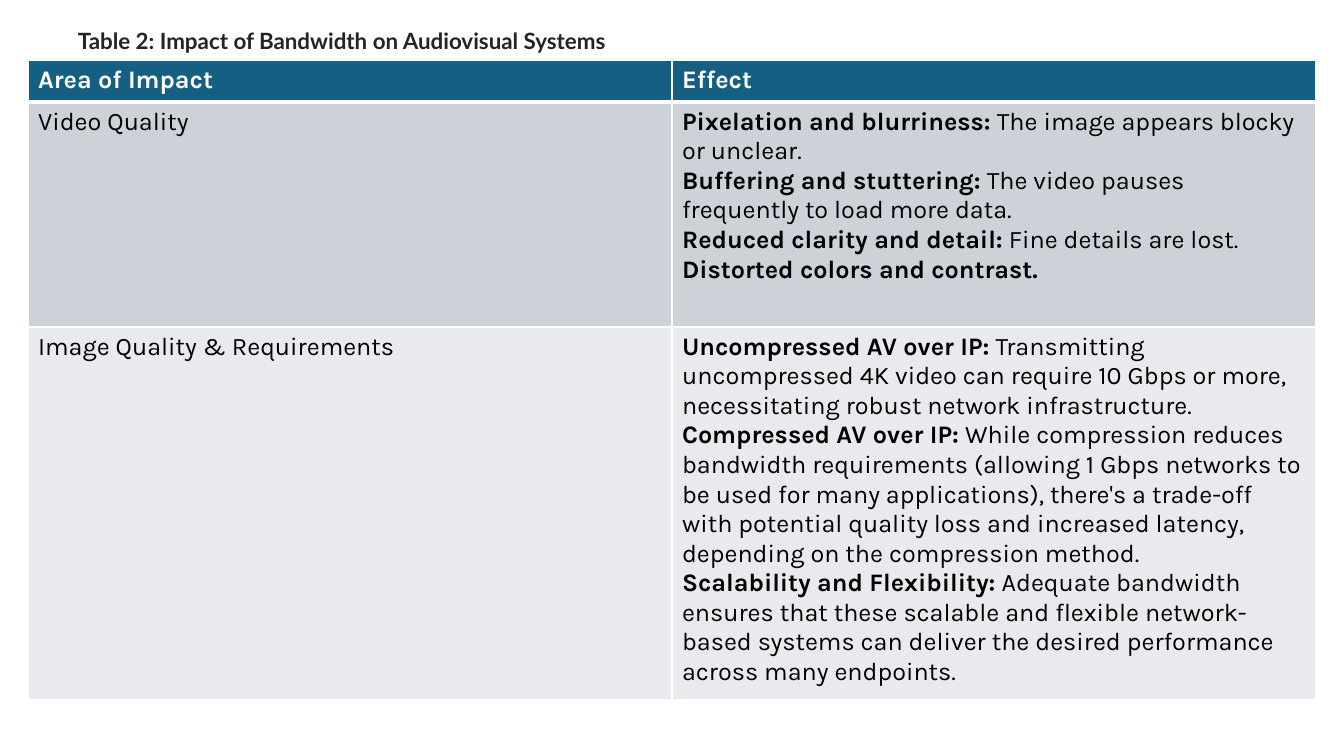
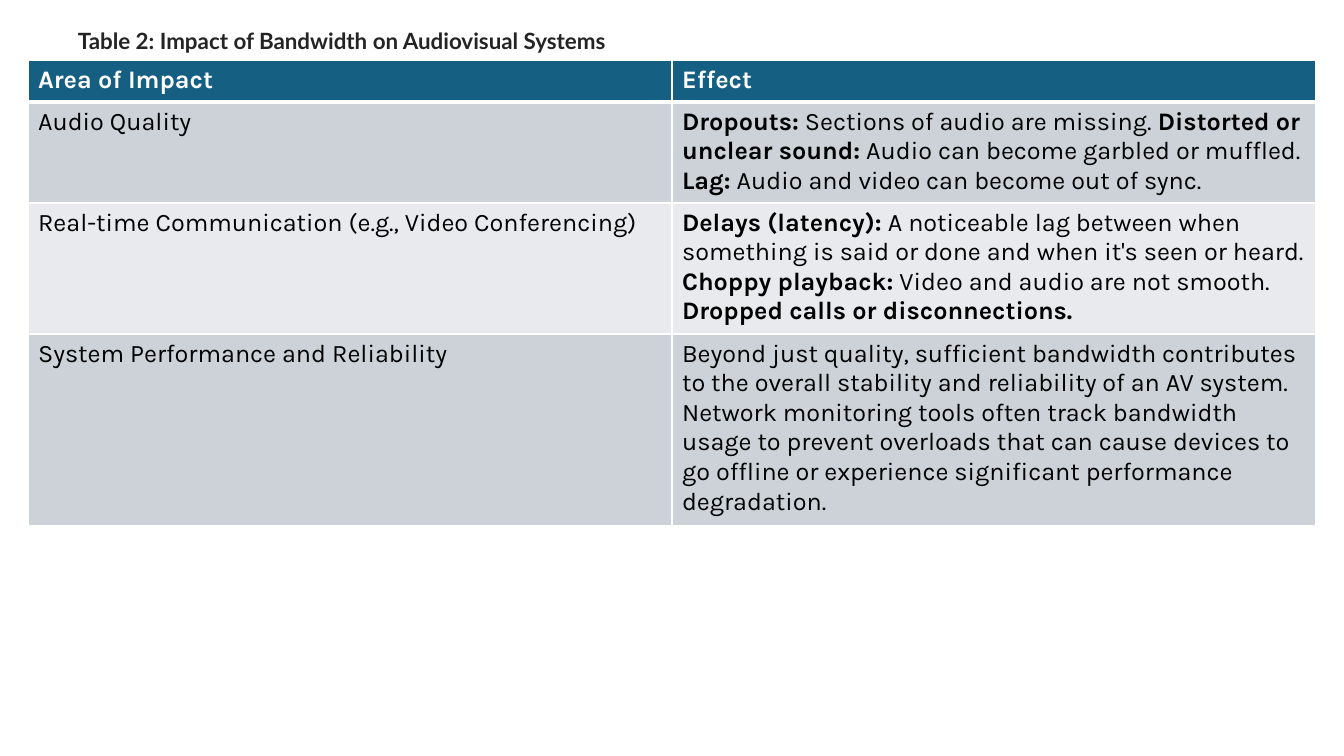
"""Two slides of tables on how bandwidth affects audiovisual systems."""
import pptx
import pptx.dml.color
import pptx.enum.text
import pptx.oxml
import pptx.oxml.ns
import pptx.util

COLORS = {"header": "156082", "odd": "CCD2D8", "even": "E8EAED",
          "white": "FFFFFF", "black": "000000", "title": "242424"}
PX = 914400 / 100.8
PAGE_SIZE = (1344, 756)
TITLE_BOX = (68, 22, 587, 37)
TABLE_LEFT, TABLE_TOP, COLUMN_WIDTH, HEADER_HEIGHT = 28, 60, 644, 42

TITLE = "Table 2: Impact of Bandwidth on Audiovisual Systems"
HEADINGS = ("Area of Impact", "Effect")
# Each effect paragraph alternates bold and regular wording.
TABLES = [
    [
        ("Video Quality", 225, [
            ("Pixelation and blurriness:", " The image appears blocky or unclear."),
            ("Buffering and stuttering:", " The video pauses frequently to load more data."),
            ("Reduced clarity and detail:", " Fine details are lost. ",
             "Distorted colors and contrast."),
        ]),
        ("Image Quality & Requirements", 372, [
            ("Uncompressed AV over IP:",
             " Transmitting uncompressed 4K video can require 10 Gbps or more, "
             "necessitating robust network infrastructure."),
            ("Compressed AV over IP:",
             " While compression reduces bandwidth requirements (allowing 1 Gbps networks "
             "to be used for many applications), there's a trade-off with potential quality "
             "loss and increased latency, depending on the compression method."),
            ("Scalability and Flexibility:",
             " Adequate bandwidth ensures that these scalable and flexible network-based "
             "systems can deliver the desired performance across many endpoints."),
        ]),
    ],
    [
        ("Audio Quality", 101, [
            ("Dropouts:", " Sections of audio are missing. ",
             "Distorted or unclear sound:", " Audio can become garbled or muffled."),
            ("Lag:", " Audio and video can become out of sync."),
        ]),
        ("Real-time Communication (e.g., Video Conferencing)", 131, [
            ("Delays (latency):", " A noticeable lag between when something is said "
             "or done and when it's seen or heard."),
            ("Choppy playback:", " Video and audio are not smooth."),
            ("Dropped calls or disconnections.",),
        ]),
        ("System Performance and Reliability", 190, [
            ("", "Beyond just quality, sufficient bandwidth contributes to the overall "
             "stability and reliability of an AV system. Network monitoring tools often "
             "track bandwidth usage to prevent overloads that can cause devices to go "
             "offline or experience significant performance degradation."),
        ]),
    ],
]


def emu(length):
    return pptx.util.Emu(round(length * PX))


def rgb(name):
    return pptx.dml.color.RGBColor.from_string(COLORS[name])


def write(frame, paragraphs, font, size, color):
    for index, parts in enumerate(paragraphs):
        para = frame.add_paragraph() if index else frame.paragraphs[0]
        para.font.name = font
        para.font.size = pptx.util.Pt(size)
        para.font.color.rgb = rgb(color)
        for position, wording in enumerate(parts):
            if wording:
                span = para.add_run()
                span.text = wording
                span.font.bold = position % 2 == 0


def set_borders(cell, top, bottom):
    properties = cell._tc.get_or_add_tcPr()
    widths = {"lnL": 1, "lnR": 1, "lnT": top, "lnB": bottom}
    for index, (side, width) in enumerate(widths.items()):
        properties.insert(index, pptx.oxml.parse_xml(
            f'<a:{side} {pptx.oxml.ns.nsdecls("a")} w="{pptx.util.Pt(width)}">'
            f'<a:solidFill><a:srgbClr val="{COLORS["white"]}"/></a:solidFill></a:{side}>'))


def add_title(page):
    box = page.shapes.add_textbox(*map(emu, TITLE_BOX))
    box.fill.solid()
    box.fill.fore_color.rgb = rgb("white")
    frame = box.text_frame
    frame.word_wrap = False
    frame.auto_size = pptx.enum.text.MSO_AUTO_SIZE.SHAPE_TO_FIT_TEXT
    frame.vertical_anchor = pptx.enum.text.MSO_ANCHOR.MIDDLE
    write(frame, [(TITLE,)], "Lato", 16, "title")


def add_impact_table(page, impacts):
    area, effect = HEADINGS
    rows = [(HEADER_HEIGHT, [(area,)], [(effect,)])]
    rows += [(height, [("", name)], effects) for name, height, effects in impacts]
    total = sum(row[0] for row in rows)
    table = page.shapes.add_table(len(rows), 2, emu(TABLE_LEFT), emu(TABLE_TOP),
                                  emu(2 * COLUMN_WIDTH), emu(total)).table
    for column in table.columns:
        column.width = emu(COLUMN_WIDTH)
    for number, (height, *contents) in enumerate(rows):
        table.rows[number].height = emu(height)
        fill = "header" if number == 0 else "odd" if number % 2 else "even"
        for cell, paragraphs in zip(table.rows[number].cells, contents):
            cell.fill.solid()
            cell.fill.fore_color.rgb = rgb(fill)
            set_borders(cell, 3 if number == 1 else 1, 1 if number else 3)
            write(cell.text_frame, paragraphs, "Karla", 18, "black" if number else "white")


def main():
    deck = pptx.Presentation()
    deck.slide_width, deck.slide_height = map(emu, PAGE_SIZE)
    for impacts in TABLES:
        page = deck.slides.add_slide(deck.slide_layouts[6])
        add_title(page)
        add_impact_table(page, impacts)
    deck.save("out.pptx")


if __name__ == "__main__":
    main()
